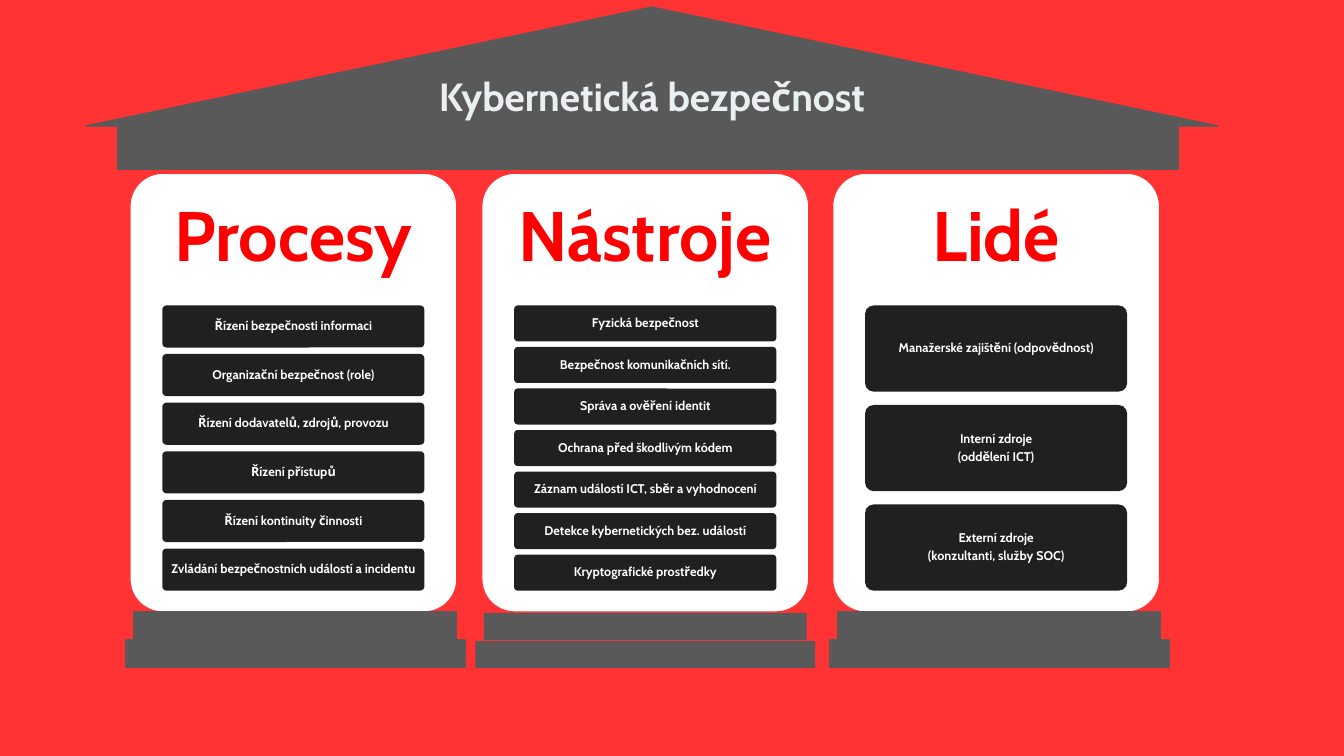
from pptx import Presentation
from pptx.dml.color import RGBColor
from pptx.enum.shapes import MSO_SHAPE
from pptx.enum.text import MSO_ANCHOR, PP_ALIGN
from pptx.util import Inches, Pt

RED = RGBColor(0xFF, 0x33, 0x33)
HEADING_RED = RGBColor(0xFF, 0x00, 0x00)
WHITE = RGBColor(0xFF, 0xFF, 0xFF)
STONE = RGBColor(0x59, 0x59, 0x59)
BLACK = RGBColor(0x20, 0x20, 0x20)
PALE = RGBColor(0xEA, 0xEF, 0xF2)
FONT = "Cabin"

PILLAR_TOP, PILLAR_WIDTH, PILLAR_HEIGHT = 1.72, 3.24, 4.35
HEADING_HEIGHT = 1.3
BAR_WIDTH, BARS_OFFSET, BARS_HEIGHT = 2.6, 1.31, 2.83
GAP_RATIO = 0.154
STEP_HEIGHT, STEP_PITCH = 0.27, 0.28
STEP_WIDTHS = (3.2, 3.37)

PILLARS = [
    (1.29, "Procesy", [
        "Řízení bezpečnosti informaci",
        "Organizační bezpečnost (role)",
        "Řízení dodavatelů, zdrojů, provozu",
        "Řízení přístupů",
        "Řízení kontinuity činnosti",
        "Zvládání bezpečnostních událostí a incidentu",
    ]),
    (4.78, "Nástroje", [
        "Fyzická bezpečnost",
        "Bezpečnost komunikačních sítí.",
        "Správa a ověření identit",
        "Ochrana před škodlivým kódem",
        "Záznam událostí ICT, sběr a vyhodnocení",
        "Detekce kybernetických bez. událostí",
        "Kryptografické prostředky",
    ]),
    (8.26, "Lidé", [
        "Manažerské zajištění (odpovědnost)",
        "Interní zdroje\n(oddělení ICT)",
        "Externí zdroje\n(konzultanti, služby SOC)",
    ]),
]
BASES = [(2.93, 6.07, STONE), (6.4, 6.08, None), (9.91, 6.07, STONE)]


def write_text(shape, text, size, color, insets=(0.03, 0.02), spacing=0.9, after=0.35):
    """Fill a shape with centred bold text, one paragraph per line."""
    frame = shape.text_frame
    frame.word_wrap = True
    frame.vertical_anchor = MSO_ANCHOR.MIDDLE
    frame.margin_left = frame.margin_right = Inches(insets[0])
    frame.margin_top = frame.margin_bottom = Inches(insets[1])
    frame.text = text
    for paragraph in frame.paragraphs:
        paragraph.alignment = PP_ALIGN.CENTER
        paragraph.line_spacing = spacing
        paragraph.space_before = Pt(0)
        paragraph.space_after = Pt(size * after)
        paragraph.font.name = FONT
        paragraph.font.size = Pt(size)
        paragraph.font.bold = True
        paragraph.font.color.rgb = color


def add_block(slide, kind, box, fill, line=None, line_width=1):
    """Add a filled preset shape, outlined only when a line colour is given."""
    shape = slide.shapes.add_shape(kind, *map(Inches, box))
    shape.shadow.inherit = False
    shape.fill.solid()
    shape.fill.fore_color.rgb = fill
    if line is None:
        shape.line.fill.background()
    else:
        shape.line.color.rgb = line
        shape.line.width = Pt(line_width)
    if kind == MSO_SHAPE.ROUNDED_RECTANGLE:
        shape.adjustments[0] = 0.1
    return shape


def add_pillar(slide, box, heading, labels):
    """Draw a white pillar with its heading and evenly stacked bars."""
    left, top, width, height = box
    add_block(slide, MSO_SHAPE.ROUNDED_RECTANGLE, box, WHITE, RED, 0.75)
    heading_box = slide.shapes.add_textbox(
        *map(Inches, (left, top, width, HEADING_HEIGHT)))
    write_text(heading_box, heading, 50, HEADING_RED, insets=(0.21, 0.21))
    bar_height = BARS_HEIGHT / (len(labels) + GAP_RATIO * (len(labels) - 1))
    pitch = bar_height * (1 + GAP_RATIO)
    bar_left = left + (width - BAR_WIDTH) / 2
    for index, label in enumerate(labels):
        bar_top = top + BARS_OFFSET + index * pitch
        bar = add_block(slide, MSO_SHAPE.ROUNDED_RECTANGLE,
                        (bar_left, bar_top, BAR_WIDTH, bar_height), BLACK)
        write_text(bar, label, 9, WHITE)


def add_roof(slide, box, title_text):
    """Draw the gable and beam, with the slide title in the gable."""
    left, top, width, height = box
    add_block(slide, MSO_SHAPE.ISOSCELES_TRIANGLE, box, STONE, STONE)
    add_block(slide, MSO_SHAPE.RECTANGLE,
              (left + 0.32, top + height, 10.52, 0.43), STONE, STONE)
    title = slide.shapes.title
    title.left, title.top = Inches(left), Inches(top + height / 2)
    title.width, title.height = Inches(width), Inches(height / 2)
    write_text(title, title_text, 28, PALE, insets=(0.1, 0.05), spacing=1.0, after=0)
    slide.shapes.element.append(title.element)


def add_base(slide, centre, top, line):
    """Draw the two widening steps under a pillar."""
    for index, width in enumerate(STEP_WIDTHS):
        box = (centre - width / 2, top + index * STEP_PITCH, width, STEP_HEIGHT)
        add_block(slide, MSO_SHAPE.RECTANGLE, box, STONE, line)


def main():
    """Build the temple slide and save it."""
    presentation = Presentation()
    presentation.slide_width = Inches(13.33)
    presentation.slide_height = Inches(7.5)
    slide = presentation.slides.add_slide(presentation.slide_layouts[5])
    slide.background.fill.solid()
    slide.background.fill.fore_color.rgb = RED
    for left, heading, labels in PILLARS:
        add_pillar(slide, (left, PILLAR_TOP, PILLAR_WIDTH, PILLAR_HEIGHT), heading, labels)
    add_roof(slide, (0.85, 0.07, 11.23, 1.18), "Kybernetická bezpečnost")
    for centre, top, line in BASES:
        add_base(slide, centre, top, line)
    presentation.save("out.pptx")


if __name__ == "__main__":
    main()
